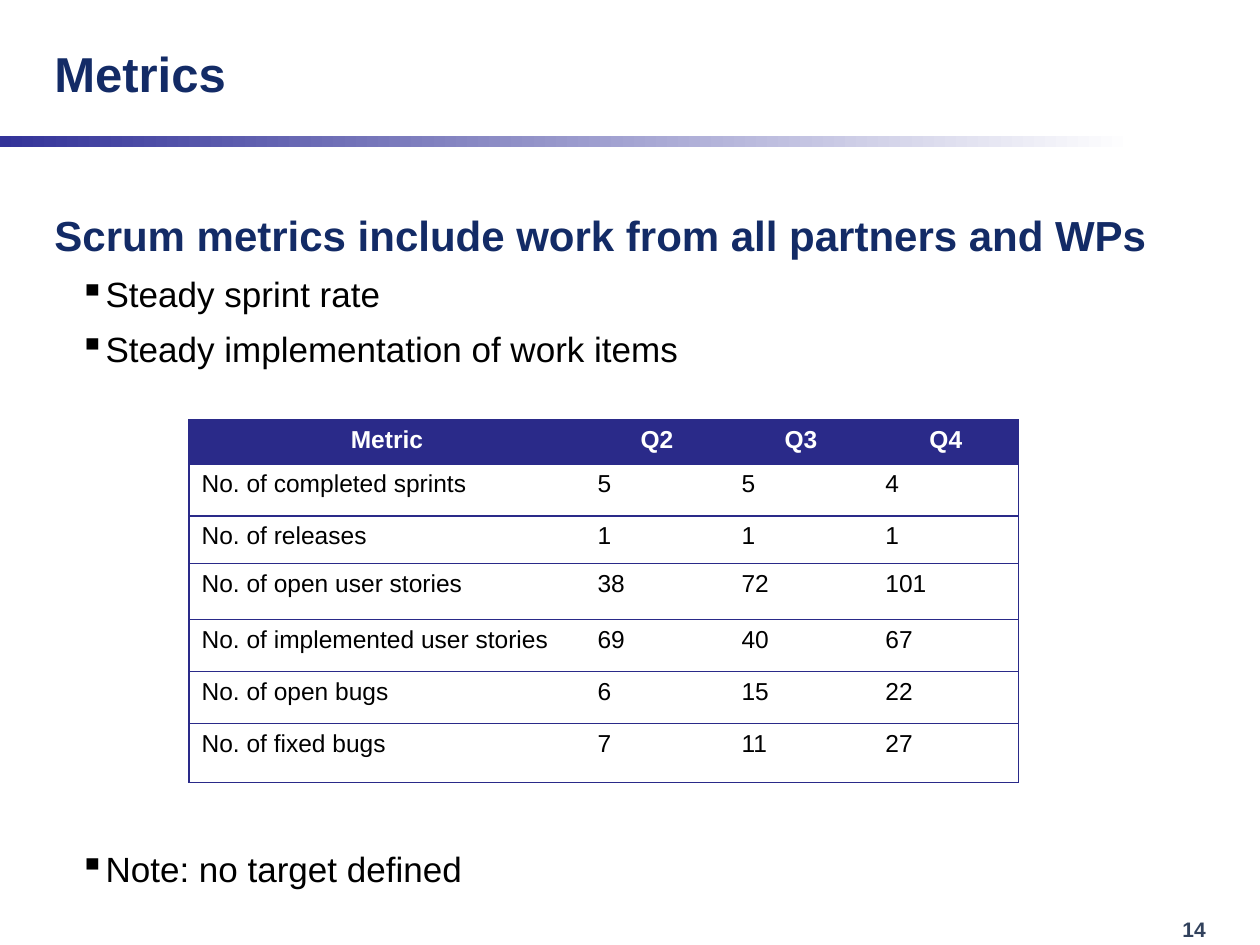
from lxml import etree
from pptx import Presentation
from pptx.dml.color import RGBColor
from pptx.enum.shapes import MSO_SHAPE
from pptx.enum.text import MSO_ANCHOR, PP_ALIGN
from pptx.oxml.ns import qn
from pptx.util import Emu, Pt

RECTANGLE = MSO_SHAPE.RECTANGLE
TOP, MIDDLE = MSO_ANCHOR.TOP, MSO_ANCHOR.MIDDLE
LEFT, CENTER = PP_ALIGN.LEFT, PP_ALIGN.CENTER

NAVY = RGBColor(0x13, 0x2B, 0x66)
INDIGO = RGBColor(0x2A, 0x2A, 0x89)
BAR_BLUE = RGBColor(0x33, 0x33, 0x99)
SLATE = RGBColor(0x32, 0x42, 0x5D)
BLACK = RGBColor(0, 0, 0)
WHITE = RGBColor(0xFF, 0xFF, 0xFF)

FONT = "Arial"
EMU_PER_PX = 914400 / 126
BORDER_WIDTH = Pt(0.75)

COLUMN_WIDTHS = [396, 144, 144, 146]
ROW_HEIGHTS = [44, 52, 48, 56, 52, 52, 59]
METRICS = [
    ("Metric", "Q2", "Q3", "Q4"),
    ("No. of completed sprints", "5", "5", "4"),
    ("No. of releases", "1", "1", "1"),
    ("No. of open user stories", "38", "72", "101"),
    ("No. of implemented user stories", "69", "40", "67"),
    ("No. of open bugs", "6", "15", "22"),
    ("No. of fixed bugs", "7", "11", "27"),
]


def px(length):
    return Emu(round(length * EMU_PER_PX))


def write(para, text, size, color=BLACK, bold=False, align=LEFT):
    para.alignment = align
    span = para.add_run()
    span.text = text
    span.font.name = FONT
    span.font.size = Pt(size)
    span.font.bold = bold
    span.font.color.rgb = color


def add_box(slide, left, top, width, height, anchor=TOP):
    """Add a wrapping text box and return its text frame."""
    frame = slide.shapes.add_textbox(px(left), px(top), px(width), px(height)).text_frame
    frame.word_wrap = True
    frame.vertical_anchor = anchor
    return frame


def write_bullet(para, text):
    para.line_spacing = 1.05
    properties = para._p.get_or_add_pPr()
    properties.set("marL", str(px(50)))
    properties.set("indent", str(px(-25)))
    etree.SubElement(properties, qn("a:buChar"), char="▪")
    write(para, text, 20)


def add_gradient_bar(slide):
    bar = slide.shapes.add_shape(RECTANGLE, 0, px(136), px(1260), px(11))
    bar.shadow.inherit = False
    bar.line.fill.background()
    bar.fill.gradient()
    bar.fill.gradient_angle = 0
    for stop, color, position in zip(bar.fill.gradient_stops, (BAR_BLUE, WHITE), (0, 0.9)):
        stop.color.rgb = color
        stop.position = position


def set_borders(cell, visible):
    """Draw the named sides (L, R, T, B) and clear the others."""
    properties = cell._tc.get_or_add_tcPr()
    for side in "LRTB":
        line = etree.SubElement(properties, qn(f"a:ln{side}"), w=str(BORDER_WIDTH))
        if side in visible:
            fill = etree.SubElement(line, qn("a:solidFill"))
            etree.SubElement(fill, qn("a:srgbClr"), val=str(INDIGO))
        else:
            etree.SubElement(line, qn("a:noFill"))


def add_metrics_table(slide):
    table = slide.shapes.add_table(
        len(METRICS), len(COLUMN_WIDTHS), px(189), px(420),
        px(sum(COLUMN_WIDTHS)), px(sum(ROW_HEIGHTS))).table
    table.first_row = False
    table.horz_banding = False
    for column, width in zip(table.columns, COLUMN_WIDTHS):
        column.width = px(width)
    last = len(COLUMN_WIDTHS) - 1
    for r, (values, height) in enumerate(zip(METRICS, ROW_HEIGHTS)):
        table.rows[r].height = px(height)
        for c, value in enumerate(values):
            cell = table.cell(r, c)
            set_borders(cell, "TB" + "L" * (c == 0) + "R" * (c == last))
            para = cell.text_frame.paragraphs[0]
            if r == 0:
                cell.fill.solid()
                cell.fill.fore_color.rgb = INDIGO
                write(para, value, 14, color=WHITE, bold=True, align=CENTER)
            else:
                cell.fill.background()
                write(para, value, 14)


def add_body(slide):
    body = add_box(slide, 42, 201, 1176, 180)
    heading = body.paragraphs[0]
    heading.line_spacing = 1.05
    write(heading, "Scrum metrics include work from all partners and WPs", 24,
          color=NAVY, bold=True)
    for text in ("Steady sprint rate", "Steady implementation of work items"):
        para = body.add_paragraph()
        para.space_before = Pt(6)
        write_bullet(para, text)
    note = add_box(slide, 42, 839, 1176, 55)
    write_bullet(note.paragraphs[0], "Note: no target defined")


def main():
    deck = Presentation()
    deck.slide_width, deck.slide_height = px(1260), px(945)
    slide = deck.slides.add_slide(deck.slide_layouts[6])
    number = add_box(slide, 1170, 910, 81, 38)
    write(number.paragraphs[0], "14", 12, color=SLATE, bold=True)
    add_gradient_bar(slide)
    title = add_box(slide, 42, 10, 892, 126, anchor=MIDDLE)
    write(title.paragraphs[0], "Metrics", 28, color=NAVY, bold=True)
    add_body(slide)
    add_metrics_table(slide)
    deck.save("out.pptx")


if __name__ == "__main__":
    main()
